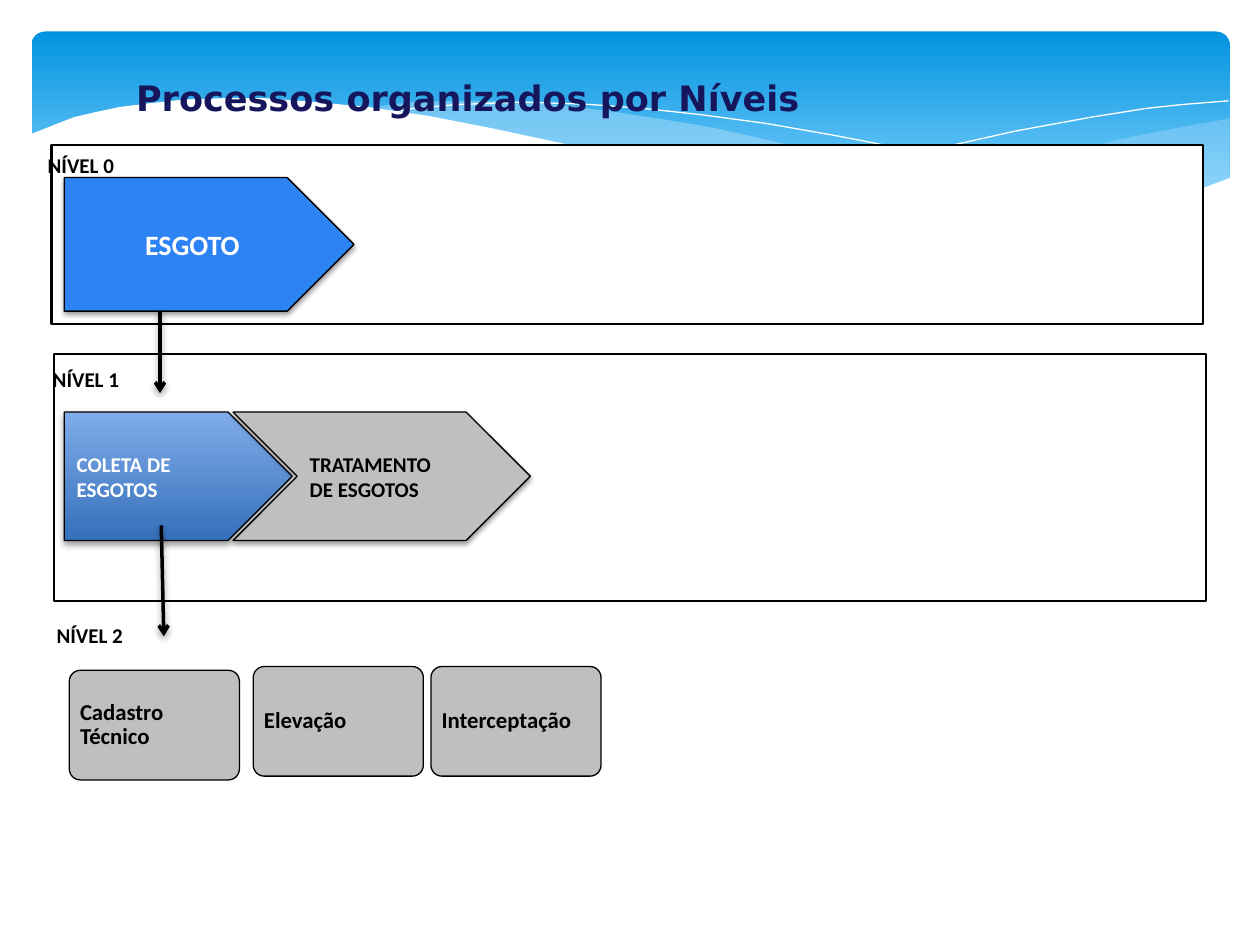
"""Build the slide of sewage processes organised by levels."""
from dataclasses import dataclass
from typing import Optional

from lxml.etree import SubElement
from pptx import Presentation
from pptx.dml.color import RGBColor
from pptx.enum.shapes import MSO_CONNECTOR, MSO_SHAPE
from pptx.enum.text import MSO_ANCHOR, MSO_AUTO_SIZE, PP_ALIGN
from pptx.oxml.ns import qn
from pptx.util import Inches, Pt

COLORS = {
    "black": "000000", "white": "FFFFFF", "navy": "16165D", "gray": "BFBFBF",
    "blue": "2D83F4", "sky": "0293E0", "pale": "83D3FE", "mist": "C6E7FC",
    "steel_light": "80ACEA", "steel": "3570BA",
}
BASE_FONT = {"name": "Calibri", "size": Pt(12), "bold": True}


@dataclass
class Block:
    kind: MSO_SHAPE
    at: tuple
    fill: tuple
    text: str = ""
    color: str = "black"
    size: int = 12
    align: PP_ALIGN = PP_ALIGN.LEFT
    line: Optional[float] = 0.75
    adj: Optional[float] = None
    margin: float = 0.1
    spacing: float = 1.0
    blur: float = 0
    stop: float = 1.0


@dataclass
class Wave:
    points: list
    fill: Optional[str] = None
    alpha: int = 100


@dataclass
class Label:
    text: str
    left: float
    top: float


@dataclass
class Arrow:
    start: tuple
    end: tuple


WAVES = [
    Wave([(9.76, 0.94), (9.48, 0.99), (9.21, 1.04), (8.91, 1.1), (8.61, 1.18),
          (8.05, 1.31), (7.53, 1.43), (7.06, 1.52), (6.61, 1.6), (6.91, 1.64),
          (7.32, 1.68), (7.69, 1.71), (8.03, 1.72), (8.35, 1.72), (8.72, 1.69),
          (9.05, 1.63), (9.35, 1.56), (9.63, 1.47), (9.76, 1.41)], "mist", 29),
    Wave([(8.93, 1.67), (8.66, 1.64), (8.07, 1.54), (7.41, 1.42), (6.68, 1.26),
          (6.13, 1.12), (5.69, 1.02), (5.28, 0.95), (4.89, 0.89), (4.42, 0.83),
          (3.99, 0.8), (3.61, 0.8), (3.28, 0.81), (2.86, 0.86), (3.23, 0.9),
          (3.62, 0.97), (4.04, 1.06), (4.49, 1.16), (5.3, 1.35), (5.84, 1.46),
          (6.34, 1.56), (6.8, 1.63), (7.22, 1.68), (7.61, 1.71), (8.07, 1.73),
          (8.48, 1.72)], "mist", 40),
    Wave([(3.09, 0.9), (3.28, 0.86), (3.63, 0.83), (4.16, 0.81), (4.69, 0.83),
          (5.1, 0.86), (5.56, 0.91), (6.08, 0.98), (6.65, 1.08), (7.27, 1.2),
          (7.95, 1.36), (8.69, 1.55), (9.07, 1.66)]),
    Wave([(6.13, 1.51), (6.53, 1.41), (6.95, 1.3), (7.48, 1.17), (8.06, 1.04),
          (8.66, 0.93), (9.1, 0.86), (9.38, 0.83), (9.75, 0.8)]),
    Wave([(9.77, 1.41), (9.5, 1.51), (9.2, 1.59), (8.87, 1.66), (8.5, 1.7),
          (8.09, 1.71), (7.61, 1.7), (7.08, 1.65), (6.48, 1.56), (5.79, 1.44),
          (5.03, 1.28), (4.47, 1.14), (3.91, 1.02), (3.4, 0.92), (2.92, 0.85),
          (2.5, 0.81), (2.11, 0.78), (1.77, 0.78), (1.46, 0.79), (1.19, 0.82),
          (0.95, 0.85), (0.76, 0.89), (0.59, 0.93), (0.46, 0.98), (0.36, 1.02),
          (0.23, 1.07), (0.23, 2.24), (9.77, 2.24)], "white"),
]
BANNER = Block(MSO_SHAPE.ROUNDED_RECTANGLE, (0.25, 0.25, 9.51, 1.56), ("sky", "pale"),
               line=None, adj=0.07, stop=0.9)
FRAMES = [Block(MSO_SHAPE.RECTANGLE, at, ("white",), line=1.25)
          for at in ((0.41, 1.15, 9.14, 1.42), (0.43, 2.81, 9.14, 1.96))]
LABELS = [Label("NÍVEL 0", 0.28, 1.16), Label("NÍVEL 1", 0.32, 2.86),
          Label("NÍVEL 2", 0.35, 4.89)]
STEPS = [
    Block(MSO_SHAPE.PENTAGON, (0.51, 1.41, 2.3, 1.06), ("blue",), "ESGOTO", "white",
          16, PP_ALIGN.CENTER, blur=3.1),
    Block(MSO_SHAPE.PENTAGON, (0.51, 3.27, 1.81, 1.02), ("steel_light", "steel"),
          "COLETA DE ESGOTOS", "white", blur=4),
    Block(MSO_SHAPE.CHEVRON, (1.85, 3.27, 2.36, 1.02), ("gray",),
          "TRATAMENTO DE ESGOTOS", blur=3.1),
]
CARDS = [Block(MSO_SHAPE.ROUNDED_RECTANGLE, (left, top, 1.35, 0.87), ("gray",), text,
               size=13, adj=0.1, margin=0.06, spacing=0.9)
         for text, left, top in (("Cadastro Técnico", 0.55, 5.32),
                                 ("Elevação", 2.01, 5.29),
                                 ("Interceptação", 3.42, 5.29))]
ARROWS = [Arrow((1.28, 4.17), (1.3, 5.05)), Arrow((1.27, 2.47), (1.27, 3.12))]


def rgb(name: str) -> RGBColor:
    """Return the named colour."""
    return RGBColor.from_string(COLORS[name])


def apply(target, **values) -> None:
    """Set attributes of an object from format values."""
    for name, value in values.items():
        setattr(target, name, value)


def set_effects(sp, blur: float) -> None:
    """Give a drawn object a soft drop shadow, or none."""
    effects = SubElement(sp._element.spPr, qn("a:effectLst"))
    if blur:
        shadow = SubElement(effects, qn("a:outerShdw"), blurRad=str(Pt(blur)),
                            dist=str(Pt(blur / 2)), dir="5400000", rotWithShape="0")
        color = SubElement(shadow, qn("a:srgbClr"), val=COLORS["black"])
        SubElement(color, qn("a:alpha"), val="38000")


def write(tf, text: str, color: str = "black", align=PP_ALIGN.LEFT,
          spacing: float = 1.0, **font) -> None:
    """Write one formatted paragraph."""
    tf.word_wrap = True
    p = tf.paragraphs[0]
    apply(p, alignment=align, line_spacing=spacing)
    r = p.add_run()
    r.text = text
    apply(r.font, **{**BASE_FONT, **font})
    r.font.color.rgb = rgb(color)


def add_block(s, block: Block) -> None:
    """Draw a filled preset shape with optional text."""
    sp = s.shapes.add_shape(block.kind, *map(Inches, block.at))
    if block.adj is not None:
        sp.adjustments[0] = block.adj
    if len(block.fill) == 2:
        sp.fill.gradient()
        sp.fill.gradient_angle = 270
        for stop, name, position in zip(sp.fill.gradient_stops, block.fill, (0, block.stop)):
            stop.color.rgb = rgb(name)
            stop.position = position
    else:
        sp.fill.solid()
        sp.fill.fore_color.rgb = rgb(block.fill[0])
    if block.line is None:
        sp.line.fill.background()
    else:
        sp.line.color.rgb = rgb("black")
        sp.line.width = Pt(block.line)
    set_effects(sp, block.blur)
    if block.text:
        tf = sp.text_frame
        apply(tf, vertical_anchor=MSO_ANCHOR.MIDDLE, margin_left=Inches(block.margin),
              margin_right=Inches(block.margin))
        write(tf, block.text, block.color, block.align, block.spacing, size=Pt(block.size))


def add_wave(s, wave: Wave) -> None:
    """Draw a wave as a filled area or as a thin white curve."""
    points = [(Inches(x), Inches(y)) for x, y in wave.points]
    builder = s.shapes.build_freeform(*points[0])
    builder.add_line_segments(points[1:], close=wave.fill is not None)
    sp = builder.convert_to_shape()
    if wave.fill:
        sp.fill.solid()
        sp.fill.fore_color.rgb = rgb(wave.fill)
        color = sp._element.spPr.find(".//" + qn("a:srgbClr"))
        SubElement(color, qn("a:alpha"), val=str(wave.alpha * 1000))
        sp.line.fill.background()
    else:
        sp.fill.background()
        sp.line.color.rgb = rgb("white")
        sp.line.width = Pt(0)
    set_effects(sp, 0)


def add_label(s, label: Label) -> None:
    """Write the name of a level."""
    box = s.shapes.add_textbox(*map(Inches, (label.left, label.top, 0.95, 0.3)))
    write(box.text_frame, label.text)


def add_arrow(s, arrow: Arrow) -> None:
    """Draw an arrow from one level to the next."""
    c = s.shapes.add_connector(MSO_CONNECTOR.STRAIGHT,
                               *map(Inches, arrow.start + arrow.end))
    c.line.color.rgb = rgb("black")
    c.line.width = Pt(2)
    SubElement(c.line._get_or_add_ln(), qn("a:tailEnd"), type="arrow")
    set_effects(c, 4)


def add_title(s, text: str) -> None:
    """Place the title in front of the banner."""
    title = s.shapes.title
    apply(title, left=Inches(0.98), top=Inches(0.56), width=Inches(7.87), height=Inches(0.44))
    tf = title.text_frame
    apply(tf, vertical_anchor=MSO_ANCHOR.TOP, auto_size=MSO_AUTO_SIZE.NONE)
    write(tf, text, "navy", name="DejaVu Sans", size=Pt(20))
    s.shapes._spTree.append(title._element)


def main() -> None:
    """Build and save the presentation."""
    prs = Presentation()
    apply(prs, slide_width=Inches(10), slide_height=Inches(7.5))
    s = prs.slides.add_slide(prs.slide_layouts[5])
    add_block(s, BANNER)
    for draw, items in ((add_wave, WAVES), (add_block, FRAMES), (add_label, LABELS)):
        for item in items:
            draw(s, item)
    add_title(s, "Processos organizados por Níveis")
    for draw, items in ((add_block, STEPS + CARDS), (add_arrow, ARROWS)):
        for item in items:
            draw(s, item)
    prs.save("out.pptx")


if __name__ == "__main__":
    main()
